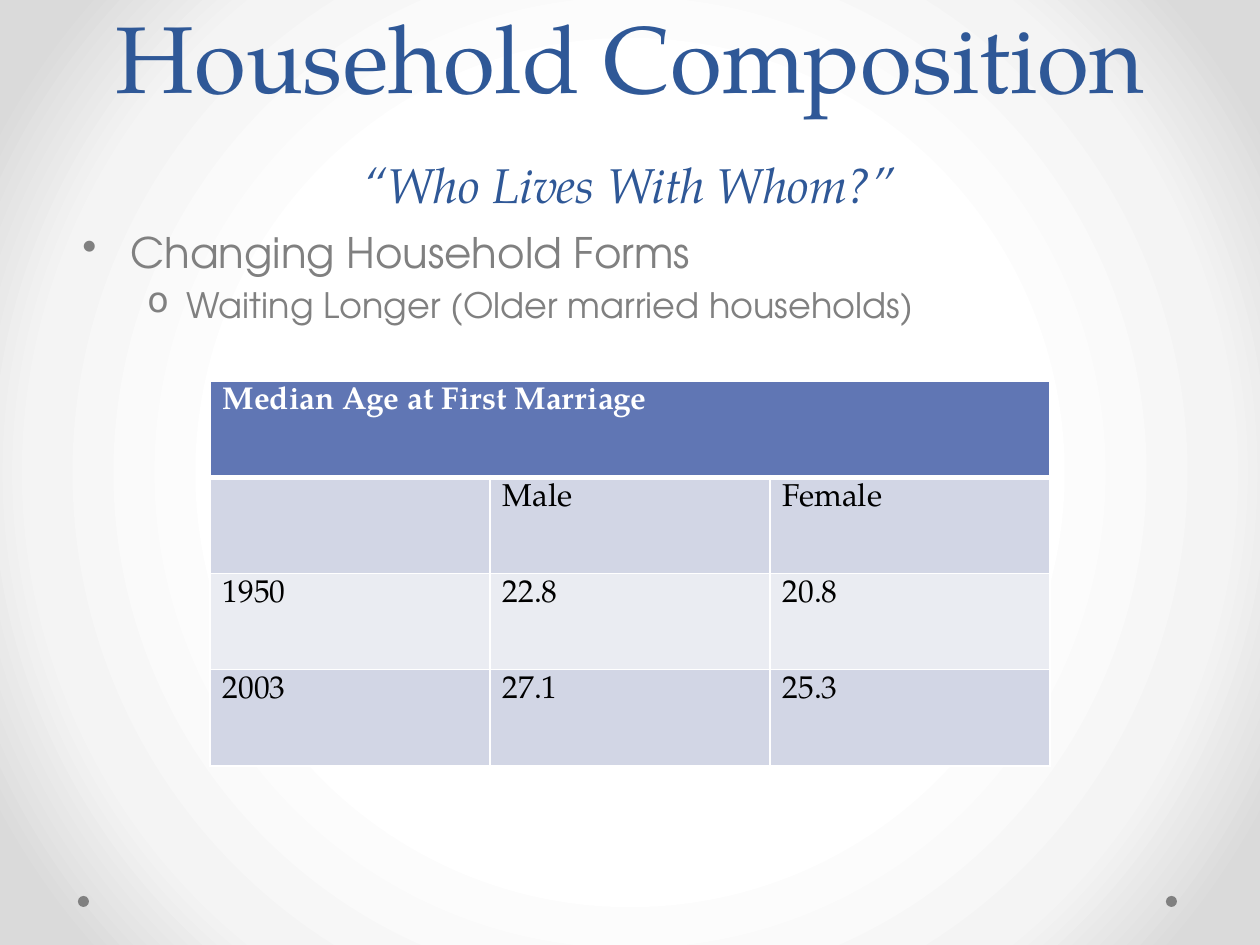
from dataclasses import dataclass

from lxml import etree
from pptx import Presentation
from pptx.dml.color import RGBColor
from pptx.enum.shapes import MSO_SHAPE
from pptx.enum.text import MSO_ANCHOR, MSO_AUTO_SIZE, PP_ALIGN
from pptx.oxml.ns import qn
from pptx.util import Emu, Pt

OVAL = MSO_SHAPE.OVAL
BOTTOM = MSO_ANCHOR.BOTTOM
CENTER = PP_ALIGN.CENTER
NO_FIT = MSO_AUTO_SIZE.NONE
TITLE_ONLY = 5
PX_PER_INCH = 126


@dataclass(frozen=True)
class Theme:
    serif: str = "TeX Gyre Pagella"
    sans: str = "TeX Gyre Adventor"
    title: str = "2F5897"
    body: str = "808080"
    header: str = "6076B4"
    bands: tuple = ("D2D6E5", "EAECF2")
    white: str = "FFFFFF"
    black: str = "000000"
    glow: tuple = ((50, "FFFFFF"), (76, "F4F4F4"), (92, "DADADA"))
    title_size: int = 54
    subtitle_size: int = 28
    title_leading: int = 58
    body_sizes: tuple = (24, 20)
    table_size: int = 18


THEME = Theme()
BULLETS = [
    (0, "•", "Changing Household Forms"),
    (1, "o", "Waiting Longer (Older married households)"),
]
BULLET_INDENTS = [(55, -48), (111, -39)]
MARRIAGE_AGES = [
    ["Median Age at First Marriage", "", ""],
    ["", "Male", "Female"],
    ["1950", "22.8", "20.8"],
    ["2003", "27.1", "25.3"],
]


def px(length):
    return Emu(round(length * 914400 / PX_PER_INCH))


def style_span(span, font, size, color, bold=False, italic=False):
    span.font.name = font
    span.font.size = Pt(size)
    span.font.color.rgb = RGBColor.from_string(color)
    span.font.bold = bold
    span.font.italic = italic


def add_solid_color(parent, color):
    fill = etree.SubElement(parent, qn("a:solidFill"))
    etree.SubElement(fill, qn("a:srgbClr"), val=color)


def set_background(page):
    page.background.fill.gradient()
    gradient = page.element.find(".//" + qn("a:gradFill"))
    for child in list(gradient):
        gradient.remove(child)
    stops = etree.SubElement(gradient, qn("a:gsLst"))
    for position, color in THEME.glow:
        stop = etree.SubElement(stops, qn("a:gs"), pos=str(position * 1000))
        etree.SubElement(stop, qn("a:srgbClr"), val=color)
    circle = etree.SubElement(gradient, qn("a:path"), path="circle")
    etree.SubElement(circle, qn("a:fillToRect"), l="50000", t="50000", r="50000", b="50000")


def add_dot(page, left, top):
    dot = page.shapes.add_shape(OVAL, px(left), px(top), px(11), px(11))
    dot.shadow.inherit = False
    dot.fill.solid()
    dot.fill.fore_color.rgb = RGBColor.from_string(THEME.body)
    dot.line.fill.background()


def set_title(page, heading, subtitle):
    title = page.shapes.title
    title.left, title.top, title.width, title.height = px(63), px(0), px(1134), px(220)
    frame = title.text_frame
    frame.text = f"{heading}\v{subtitle}"
    frame.auto_size = NO_FIT
    frame.vertical_anchor = BOTTOM
    para = frame.paragraphs[0]
    para.alignment = CENTER
    para.line_spacing = Pt(THEME.title_leading)
    heading_span, subtitle_span = para.runs
    style_span(heading_span, THEME.serif, THEME.title_size, THEME.title)
    style_span(subtitle_span, THEME.serif, THEME.subtitle_size, THEME.title, italic=True)


def set_bullet(para, level, symbol):
    margin, indent = BULLET_INDENTS[level]
    para.level = level
    properties = para._p.get_or_add_pPr()
    properties.set("marL", str(px(margin)))
    properties.set("indent", str(px(indent)))
    etree.SubElement(properties, qn("a:buChar"), char=symbol)


def add_bullets(page, bullets):
    box = page.shapes.add_textbox(px(63), px(220), px(1134), px(624))
    frame = box.text_frame
    frame.word_wrap = True
    frame.text = "\n".join(text for _, _, text in bullets)
    for para, (level, symbol, _) in zip(frame.paragraphs, bullets):
        size = THEME.body_sizes[level]
        para.space_before = Pt(round(size * 0.2))
        set_bullet(para, level, symbol)
        style_span(para.runs[0], THEME.sans, size, THEME.body)


def set_borders(cell, top, bottom):
    properties = cell._tc.get_or_add_tcPr()
    for side, width in (("L", 1), ("R", 1), ("T", top), ("B", bottom)):
        line = etree.SubElement(properties, qn(f"a:ln{side}"), w=str(Pt(width)))
        add_solid_color(line, THEME.white)


def format_cell(cell, row, text):
    is_header = row == 0
    set_borders(cell, 3 if row == 1 else 1, 3 if is_header else 1)
    cell.fill.solid()
    fill = THEME.header if is_header else THEME.bands[(row - 1) % 2]
    cell.fill.fore_color.rgb = RGBColor.from_string(fill)
    cell.text = text
    color = THEME.white if is_header else THEME.black
    for span in cell.text_frame.paragraphs[0].runs:
        style_span(span, THEME.serif, THEME.table_size, color, bold=is_header)


def add_age_table(page, rows):
    columns = len(rows[0])
    frame = page.shapes.add_table(len(rows), columns, px(210), px(381), px(840), px(385))
    table = frame.table
    for row, values in enumerate(rows):
        for column, text in enumerate(values):
            format_cell(table.cell(row, column), row, text)
    table.cell(0, 0).merge(table.cell(0, columns - 1))


def main():
    deck = Presentation()
    deck.slide_width, deck.slide_height = px(1260), px(945)
    page = deck.slides.add_slide(deck.slide_layouts[TITLE_ONLY])
    set_background(page)
    for left in (1166, 78):
        add_dot(page, left, 896)
    set_title(page, "Household Composition", "“Who Lives With Whom?”")
    add_bullets(page, BULLETS)
    add_age_table(page, MARRIAGE_AGES)
    deck.save("out.pptx")


if __name__ == "__main__":
    main()
